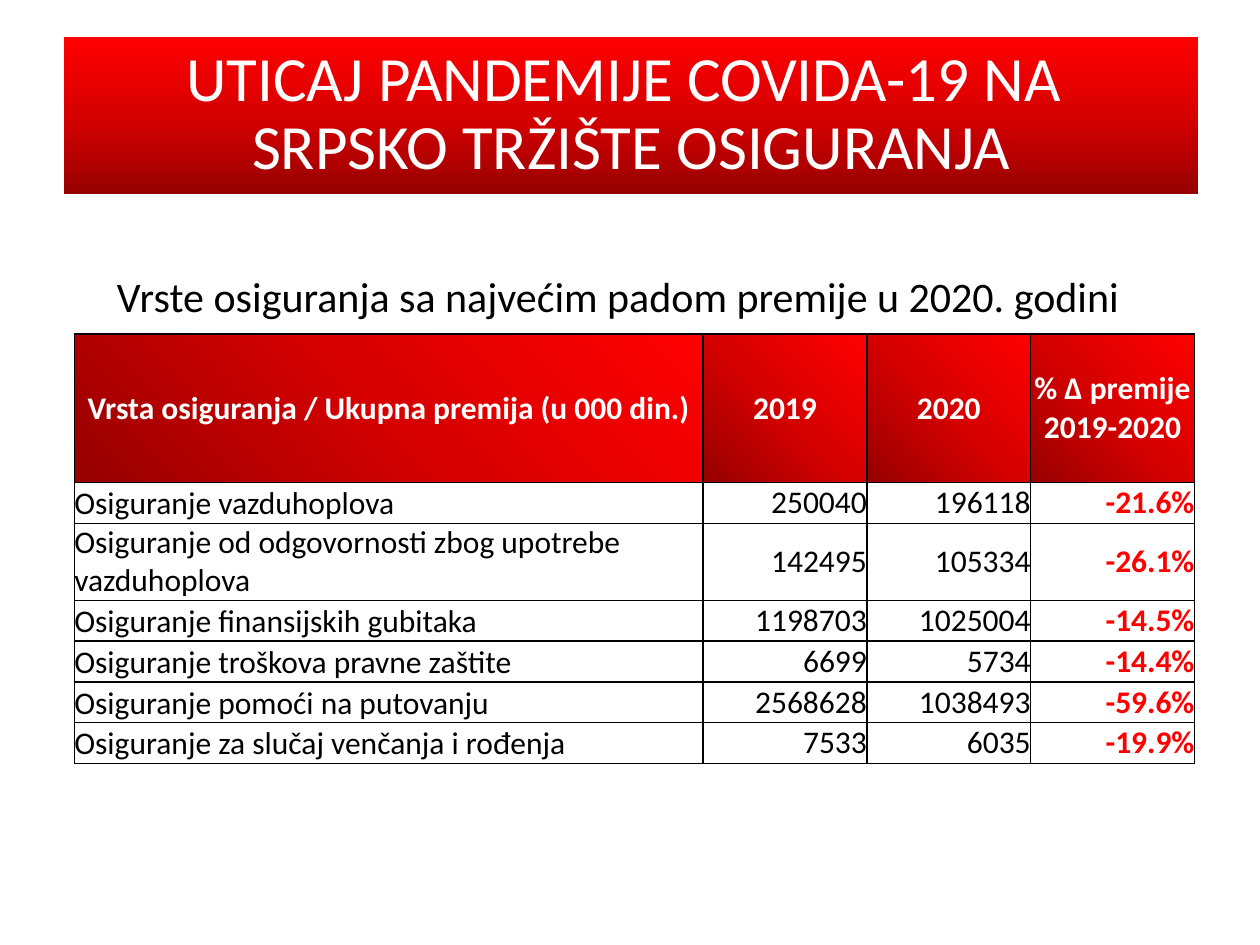
from copy import deepcopy

from lxml.etree import SubElement
from pptx import Presentation
from pptx.dml.color import RGBColor
from pptx.enum.shapes import MSO_SHAPE
from pptx.enum.text import MSO_ANCHOR, MSO_AUTO_SIZE, PP_ALIGN
from pptx.oxml.ns import qn
from pptx.util import Inches, Pt

COLUMNS, ROWS = 100, 75
HEADER = ["Vrsta osiguranja / Ukupna premija (u 000 din.)", "2019", "2020", "% Δ premije 2019-2020"]
PREMIUMS = [
    ["Osiguranje vazduhoplova", "250040", "196118", "-21.6%"],
    ["Osiguranje od odgovornosti zbog upotrebe vazduhoplova", "142495", "105334", "-26.1%"],
    ["Osiguranje finansijskih gubitaka", "1198703", "1025004", "-14.5%"],
    ["Osiguranje troškova pravne zaštite", "6699", "5734", "-14.4%"],
    ["Osiguranje pomoći na putovanju", "2568628", "1038493", "-59.6%"],
    ["Osiguranje za slučaj venčanja i rođenja", "7533", "6035", "-19.9%"],
]


def color(value):
    return RGBColor.from_string(value)


def write(frame, text, size=18, ink="000000", bold=False, align=PP_ALIGN.LEFT, spacing=None):
    for index, line in enumerate(text.split("\n")):
        para = frame.add_paragraph() if index else frame.paragraphs[0]
        para.alignment = align
        para.line_spacing = spacing
        span = para.add_run()
        span.text = line
        span.font.name = "Calibri"
        span.font.size = Pt(size)
        span.font.bold = bold
        span.font.color.rgb = color(ink)


class Builder:
    """Holds the style and the current slide, measured on a grid of 100 by 75."""

    reds = [("970000", 0), ("D70000", 0.5), ("FF0000", 1)]
    paper, ink, accent = "FFFFFF", "000000", "FF0000"

    def __init__(self, deck):
        self.column = deck.slide_width / COLUMNS
        self.row = deck.slide_height / ROWS
        self.slide = deck.slides.add_slide(deck.slide_layouts[6])

    def area(self, left, top, width, height):
        return (round(left * self.column), round(top * self.row),
                round(width * self.column), round(height * self.row))

    def shade(self, fill, element, angle):
        fill.gradient()
        fill.gradient_angle = angle
        stops = element.xpath(".//a:gsLst")[0]
        stops.insert(1, deepcopy(stops[0]))
        for stop, (red, position) in zip(fill.gradient_stops, self.reds):
            stop.color.rgb = color(red)
            stop.position = position

    def banner(self, text, *place):
        box = self.slide.shapes.add_shape(MSO_SHAPE.RECTANGLE, *self.area(*place))
        box.shadow.inherit = False
        box.line.fill.background()
        self.shade(box.fill, box.element, 90)
        box.text_frame.vertical_anchor = MSO_ANCHOR.MIDDLE
        write(box.text_frame, text, size=36, ink=self.paper, align=PP_ALIGN.CENTER, spacing=0.9)

    def caption(self, text, *place):
        box = self.slide.shapes.add_textbox(*self.area(*place))
        box.text_frame.word_wrap = False
        box.text_frame.auto_size = MSO_AUTO_SIZE.SHAPE_TO_FIT_TEXT
        write(box.text_frame, text, size=24, ink=self.ink)

    def border(self, cell):
        properties = cell._tc.get_or_add_tcPr()
        for index, side in enumerate(("lnL", "lnR", "lnT", "lnB")):
            line = SubElement(properties, qn(f"a:{side}"), w=str(Pt(1)))
            solid = SubElement(line, qn("a:solidFill"))
            SubElement(solid, qn("a:srgbClr"), val=self.ink)
            properties.insert(index, line)

    def cell(self, cell, text, heading, column):
        cell.margin_left = cell.margin_right = cell.margin_top = cell.margin_bottom = 0
        cell.vertical_anchor = MSO_ANCHOR.MIDDLE
        if heading:
            self.shade(cell.fill, cell._tc, 45)
            write(cell.text_frame, text, ink=self.paper, bold=True, align=PP_ALIGN.CENTER)
        else:
            cell.fill.background()
            change = column == len(HEADER) - 1
            if column == 0:
                cell.vertical_anchor = MSO_ANCHOR.BOTTOM
            write(cell.text_frame, text, ink=self.accent if change else self.ink, bold=change,
                  align=PP_ALIGN.RIGHT if column else PP_ALIGN.LEFT)
        self.border(cell)

    def table(self, records, left, top, widths, heights):
        place = self.area(left, top, sum(widths), sum(heights))
        table = self.slide.shapes.add_table(len(heights), len(widths), *place).table
        table.horz_banding = False
        for column, width in zip(table.columns, widths):
            column.width = round(width * self.column)
        for row, height in zip(table.rows, heights):
            row.height = round(height * self.row)
        for index, record in enumerate(records):
            for column, text in enumerate(record):
                self.cell(table.cell(index, column), text, index == 0, column)


def main():
    deck = Presentation()
    deck.slide_width, deck.slide_height = Inches(10), Inches(7.5)
    builder = Builder(deck)
    builder.banner("UTICAJ PANDEMIJE COVIDA-19 NA \nSRPSKO TRŽIŠTE OSIGURANJA", 5.1, 2.9, 90, 12.5)
    builder.table([HEADER, *PREMIUMS], 5.9, 26.5, [49.9] + [13] * 3,
                  [11.8, 3.24, 5.9] + [3.24] * 4)
    builder.caption("Vrste osiguranja sa najvećim padom premije u 2020. godini", 8.3, 21, 82.3, 5)
    deck.save("out.pptx")


if __name__ == "__main__":
    main()
